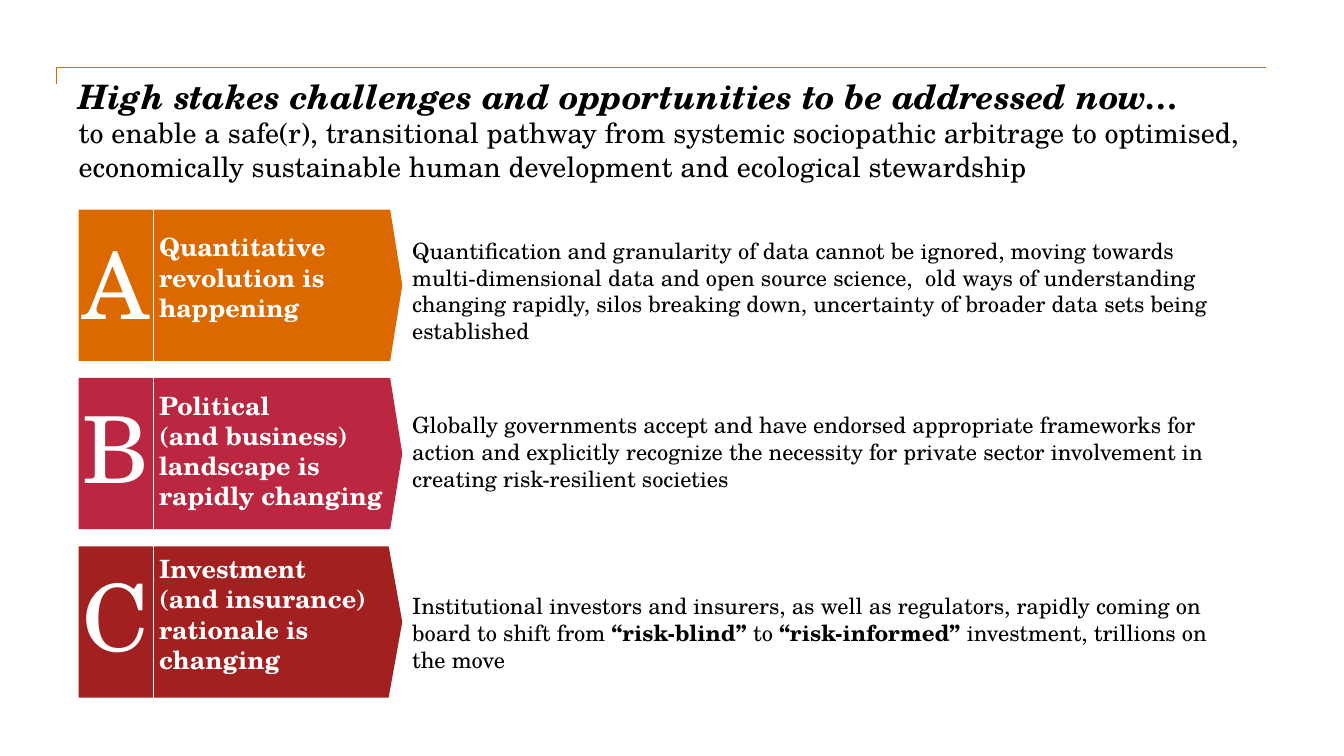
from dataclasses import dataclass
from pptx import Presentation
from pptx.dml.color import RGBColor
from pptx.enum.shapes import MSO_CONNECTOR as Connector, MSO_SHAPE as Shape
from pptx.enum.text import MSO_AUTO_SIZE as AutoSize
from pptx.oxml.ns import qn
from pptx.util import Pt
from lxml.etree import SubElement

PX = 9144  # 100 px to the inch


@dataclass(frozen=True)
class Theme:
    font: str = "TeX Gyre Schola"
    orange: str = "DC6900"
    rose: str = "BB2740"
    red: str = "A32020"
    black: str = "000000"
    white: str = "FFFFFF"
    title: int = 24
    subtitle: int = 20
    letter: int = 66
    heading: int = 18
    body: int = 16


@dataclass(frozen=True)
class Box:
    left: int
    top: int
    width: int
    height: int

    def inner(self, dx, dy, width, height):
        return Box(self.left + dx, self.top + dy, width, height)

    def emu(self):
        return [n * PX for n in (self.left, self.top, self.width, self.height)]


@dataclass(frozen=True)
class Challenge:
    letter: str
    colour: str
    point: float
    heading: list
    body: list  # (text, bold) runs
    letter_dy: int
    heading_dy: int
    body_dy: int
    body_width: int


THEME = Theme()
CHALLENGES = [
    Challenge("A", THEME.orange, 0.08, ["Quantitative revolution is happening"],
              [("Quantification and granularity of data cannot be ignored, moving towards "
                "multi-dimensional data and open source science,  old ways of understanding "
                "changing rapidly, silos breaking down, uncertainty of broader data sets "
                "being established", False)], 17, 17, 22, 843),
    Challenge("B", THEME.rose, 0.08,
              ["Political", "(and business) landscape is rapidly changing"],
              [("Globally governments accept and have endorsed appropriate frameworks for "
                "action and explicitly recognize the necessity for private sector "
                "involvement in creating risk-resilient societies", False)],
              13, 7, 28, 818),
    Challenge("C", THEME.red, 0.09,
              ["Investment", "(and insurance) rationale is changing"],
              [("Institutional investors and insurers, as well as regulators, rapidly "
                "coming on board to shift from ", False), ("“risk-blind” ", True),
               ("to ", False), ("“risk-informed” ", True),
               ("investment, trillions on the move", False)], 13, 2, 41, 843),
]


def set_font(font, size, colour, bold=None):
    font.name, font.size, font.bold = THEME.font, Pt(size), bold
    font.color.rgb = RGBColor.from_string(colour)


def add_text(page, box, paragraphs, size, colour, bold=None, inset=True):
    """Add a text box; each paragraph is a list of (text, bold) runs."""
    frame = page.shapes.add_textbox(*box.emu()).text_frame
    frame.word_wrap = True
    if inset:
        frame.auto_size = AutoSize.SHAPE_TO_FIT_TEXT
    else:
        frame.margin_left = frame.margin_right = 0
        frame.margin_top = frame.margin_bottom = 0
    for index, runs in enumerate(paragraphs):
        para = frame.add_paragraph() if index else frame.paragraphs[0]
        set_font(para.font, size, colour, bold)
        for text, strong in runs:
            span = para.add_run()
            span.text = text
            set_font(span.font, size, colour, strong or bold)
    return frame


def add_frame_line(page, box):
    """Draw the corner rule: a short tick on the left and a long top edge."""
    right, bottom = box.left + box.width, box.top + box.height
    outline = page.shapes.build_freeform(box.left, bottom, scale=PX)
    outline.add_line_segments([(box.left, box.top), (right, box.top)], close=False)
    rule = outline.convert_to_shape()
    rule.shadow.inherit = False
    rule.fill.background()
    rule.line.color.rgb = RGBColor.from_string(THEME.orange)
    rule.line.width = Pt(1)


def add_title(page, box):
    frame = add_text(page, box, [[]], THEME.title, THEME.black, inset=False)
    para = frame.paragraphs[0]
    lead = para.add_run()
    lead.text = "High stakes challenges and opportunities to be addressed now…"
    set_font(lead.font, THEME.title, THEME.black, True)
    lead.font.italic = True
    para.add_line_break()
    rest = para.add_run()
    rest.text = ("to enable a safe(r), transitional pathway from systemic sociopathic "
                 "arbitrage to optimised, economically sustainable human development "
                 "and ecological stewardship")
    set_font(rest.font, THEME.subtitle, THEME.black)


def add_challenge(page, box, item):
    arrow = page.shapes.add_shape(Shape.PENTAGON, *box.emu())
    arrow.adjustments[0] = item.point
    arrow.shadow.inherit = False
    arrow.fill.solid()
    arrow.fill.fore_color.rgb = RGBColor.from_string(item.colour)
    arrow.line.fill.background()
    add_text(page, box.inner(70, item.heading_dy, 264, 131),
             [[(line, None)] for line in item.heading],
             THEME.heading, THEME.white, bold=True)
    add_text(page, box.inner(box.width, item.body_dy, item.body_width, 91),
             [item.body], THEME.body, THEME.black)
    add_text(page, box.inner(4, item.letter_dy, 92, 111),
             [[(item.letter, None)]], THEME.letter, THEME.white, inset=False)


def add_challenges(page, box, pitch):
    """Stack the challenges down the box and divide letters from headings."""
    for index, item in enumerate(CHALLENGES):
        add_challenge(page, box.inner(0, index * pitch, box.width, 150), item)
    x = box.left + 74
    divider = page.shapes.add_connector(
        Connector.STRAIGHT, x * PX, box.top * PX, x * PX, (box.top + box.height) * PX)
    divider.line.color.rgb = RGBColor.from_string(THEME.white)
    divider.line.width = Pt(0.75)
    SubElement(divider.element.spPr, qn("a:effectLst"))


def main():
    deck = Presentation()
    deck.slide_width, deck.slide_height = 1333 * PX, 750 * PX
    page = deck.slides.add_slide(deck.slide_layouts[6])
    add_frame_line(page, Box(56, 67, 1200, 16))
    add_title(page, Box(78, 75, 1172, 100))
    add_challenges(page, Box(78, 208, 321, 484), pitch=167)
    deck.save("out.pptx")


if __name__ == "__main__":
    main()
